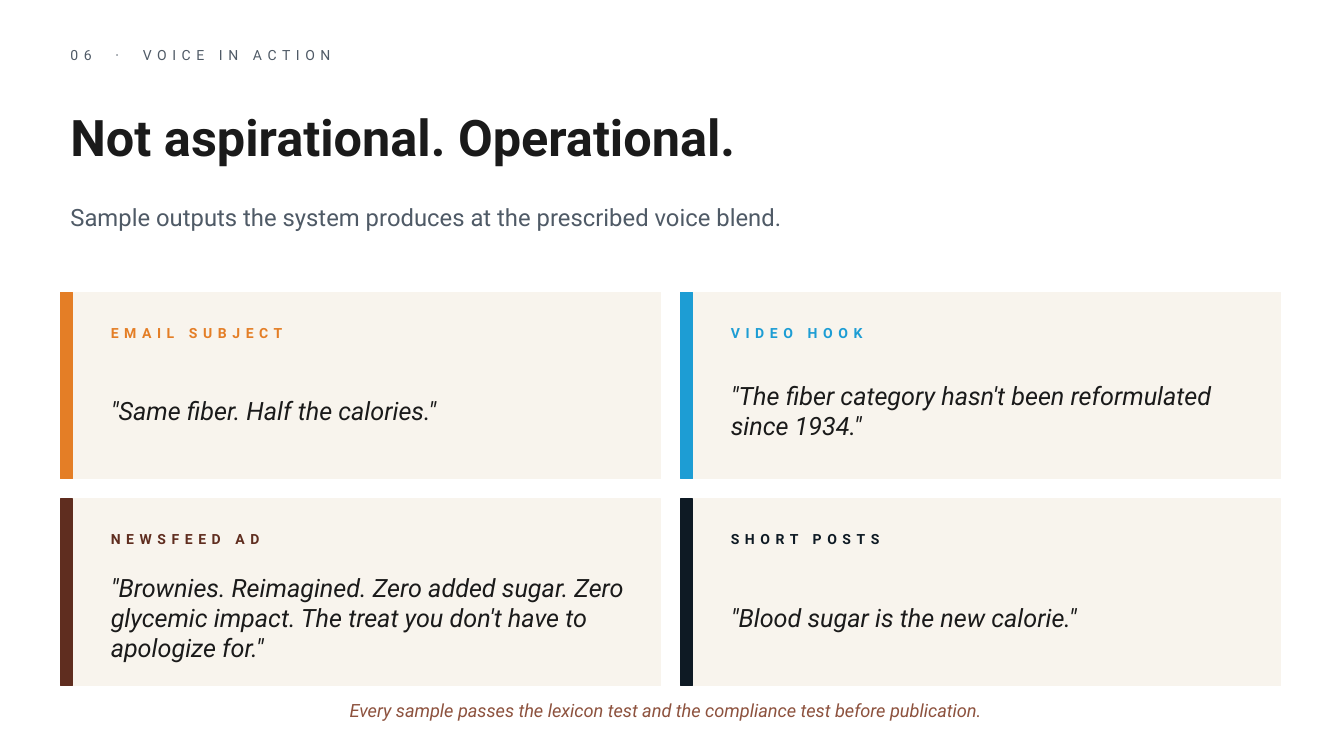
import pptx
import pptx.util
import pptx.dml.color
import pptx.enum.shapes
import pptx.enum.text

Inches = pptx.util.Inches
RGBColor = pptx.dml.color.RGBColor
ALIGN = pptx.enum.text.PP_ALIGN

INK = RGBColor(0x1A, 0x1A, 0x1A)
SLATE = RGBColor(0x4F, 0x5A, 0x66)
CREAM = RGBColor(0xF8, 0xF4, 0xED)
ORANGE = RGBColor(0xE4, 0x7E, 0x26)
BLUE = RGBColor(0x1D, 0x9D, 0xD4)
BROWN = RGBColor(0x5F, 0x2D, 0x1F)
NAVY = RGBColor(0x0E, 0x1A, 0x24)
RUST = RGBColor(0x8D, 0x52, 0x3E)

FONT = "Roboto"
TRACKING = 4  # points between letters
WIDE_GAP = 10.5  # points after a space beside the section dot

SECTION = [("06", TRACKING), (" ", WIDE_GAP), ("·", TRACKING),
           (" ", WIDE_GAP), ("VOICE IN ACTION", TRACKING)]
TITLE = "Not aspirational. Operational."
SUBTITLE = "Sample outputs the system produces at the prescribed voice blend."
SAMPLES = [
    ("EMAIL SUBJECT", '"Same fiber. Half the calories."', ORANGE),
    ("VIDEO HOOK", '"The fiber category hasn\'t been reformulated since 1934."', BLUE),
    ("NEWSFEED AD", '"Brownies. Reimagined. Zero added sugar. Zero glycemic impact. '
                    'The treat you don\'t have to apologize for."', BROWN),
    ("SHORT POSTS", '"Blood sugar is the new calorie."', NAVY),
]
FOOTNOTE = "Every sample passes the lexicon test and the compliance test before publication."

LEFT, TEXT_WIDTH = 0.6, 12
CARDS_TOP, CARD_WIDTH, CARD_HEIGHT, GAP = 2.9, 5.95, 1.85, 0.2
COLUMNS, BAR_WIDTH, INDENT, CARD_TEXT_WIDTH = 2, 0.12, 0.4, 5.35


def add_text(page, spans, left, top, width, height, size, color,
             bold=False, italic=False, align=ALIGN.LEFT):
    """Add a text box; spans holds (text, letter spacing in points) pairs."""
    box = page.shapes.add_textbox(Inches(left), Inches(top), Inches(width), Inches(height))
    frame = box.text_frame
    frame.word_wrap = True
    frame.vertical_anchor = pptx.enum.text.MSO_ANCHOR.MIDDLE
    para = frame.paragraphs[0]
    para.alignment = align
    for text, spacing in spans:
        span = para.add_run()
        span.text = text
        font = span.font
        font.name, font.size = FONT, pptx.util.Pt(size)
        font.bold, font.italic = bold, italic
        font.color.rgb = color
        if spacing:
            span._r.get_or_add_rPr().set("spc", str(int(spacing * 100)))


def add_block(page, left, top, width, height, color):
    block = page.shapes.add_shape(pptx.enum.shapes.MSO_SHAPE.RECTANGLE, Inches(left),
                                  Inches(top), Inches(width), Inches(height))
    block.shadow.inherit = False
    block.fill.solid()
    block.fill.fore_color.rgb = color
    block.line.color.rgb = color
    block.line.width = pptx.util.Pt(1)


def add_card(page, left, top, label, quote, accent):
    add_block(page, left, top, CARD_WIDTH, CARD_HEIGHT, CREAM)
    add_block(page, left, top, BAR_WIDTH, CARD_HEIGHT, accent)
    text_left = left + INDENT
    add_text(page, [(label, TRACKING)], text_left, top + 0.25, CARD_TEXT_WIDTH, 0.3,
             10, accent, bold=True)
    add_text(page, [(quote, 0)], text_left, top + 0.6, CARD_TEXT_WIDTH, 1.15,
             18, INK, italic=True)


def main():
    deck = pptx.Presentation()
    deck.slide_width, deck.slide_height = Inches(13.33), Inches(7.5)
    page = deck.slides.add_slide(deck.slide_layouts[6])

    add_text(page, SECTION, LEFT, 0.4, TEXT_WIDTH, 0.3, 10, SLATE)
    add_text(page, [(TITLE, 0)], LEFT, 0.85, TEXT_WIDTH, 1, 36, INK, bold=True)
    add_text(page, [(SUBTITLE, 0)], LEFT, 1.9, TEXT_WIDTH, 0.5, 17, SLATE)
    for index, (label, quote, accent) in enumerate(SAMPLES):
        row, column = divmod(index, COLUMNS)
        add_card(page, LEFT + column * (CARD_WIDTH + GAP),
                 CARDS_TOP + row * (CARD_HEIGHT + GAP), label, quote, accent)
    add_text(page, [(FOOTNOTE, 0)], LEFT, 6.85, TEXT_WIDTH, 0.4, 13, RUST,
             italic=True, align=ALIGN.CENTER)

    deck.save("out.pptx")


if __name__ == "__main__":
    main()
